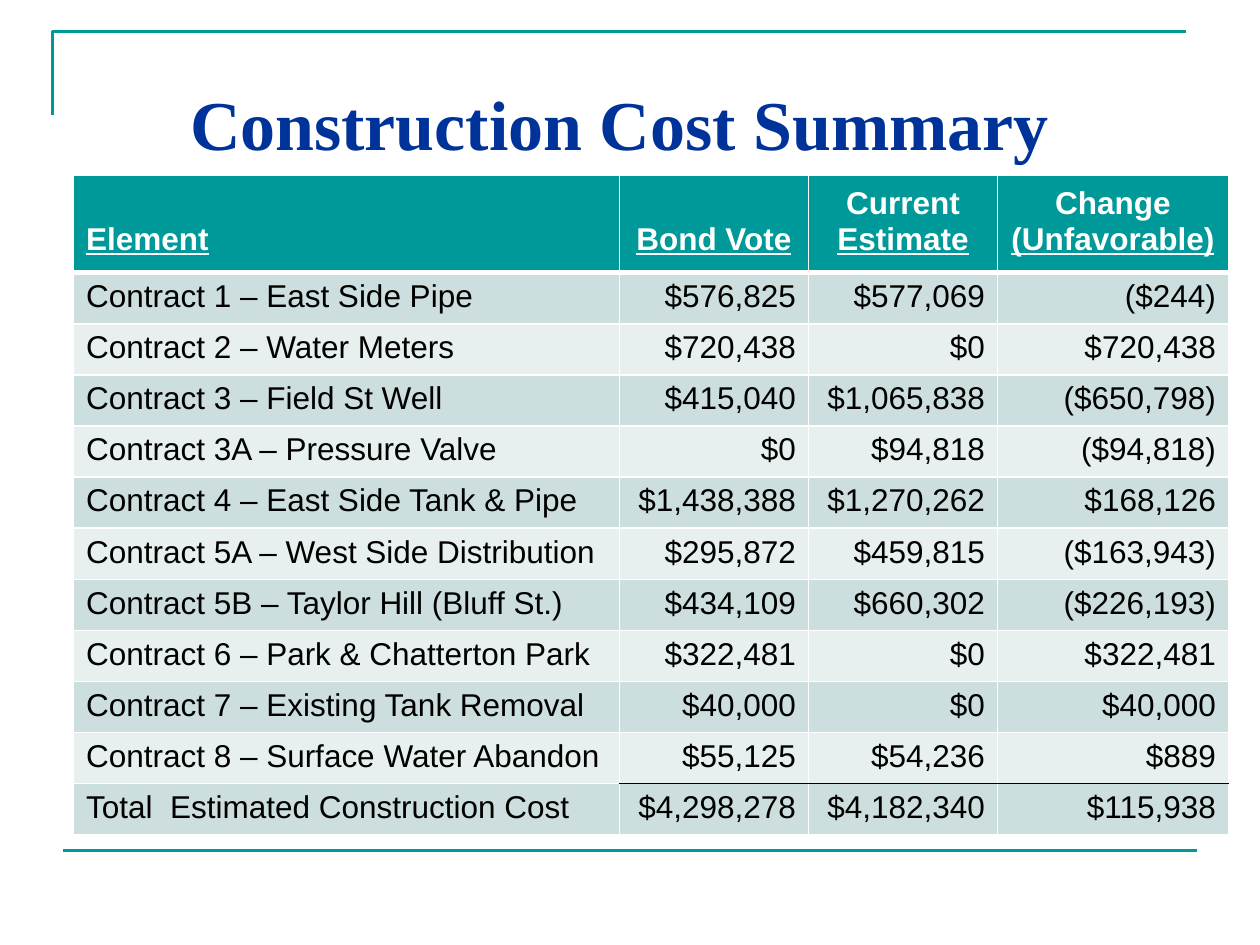
from dataclasses import dataclass

from lxml import etree
from pptx import Presentation
from pptx import util as u
from pptx.dml import color
from pptx.enum import shapes, text
from pptx.oxml import ns

WHITE = color.RGBColor(0xFF, 0xFF, 0xFF)
BLACK = color.RGBColor(0x00, 0x00, 0x00)
TEAL = color.RGBColor(0x00, 0x99, 0x99)
NAVY = color.RGBColor(0x00, 0x33, 0x99)
BAND_DARK = color.RGBColor(0xCC, 0xDE, 0xDE)
BAND_LIGHT = color.RGBColor(0xE7, 0xEF, 0xEF)

COLUMN_WIDTHS = (312, 108, 108, 132)
HEADER_HEIGHT = 54
ROW_HEIGHT = 29.2


@dataclass(frozen=True)
class Heading:
    paragraphs: tuple[tuple[str, ...], ...]
    align: text.PP_ALIGN = text.PP_ALIGN.CENTER


@dataclass(frozen=True)
class Cost:
    element: str
    bond_vote: str
    estimate: str
    change: str


@dataclass(frozen=True)
class Edge:
    ink: color.RGBColor = WHITE
    width: float = 1


HEADINGS = (
    Heading((("Element",),), text.PP_ALIGN.LEFT),
    Heading((("Bond Vote",),)),
    Heading((("Current ", "Estimate"),)),
    Heading((("Change",), ("(Unfavorable)",))),
)

COSTS = (
    Cost("Contract 1 – East Side Pipe", "$576,825", "$577,069", "($244)"),
    Cost("Contract 2 – Water Meters", "$720,438", "$0", "$720,438"),
    Cost("Contract 3 – Field St Well", "$415,040", "$1,065,838", "($650,798)"),
    Cost("Contract 3A – Pressure Valve", "$0", "$94,818", "($94,818)"),
    Cost("Contract 4 – East Side Tank & Pipe", "$1,438,388", "$1,270,262", "$168,126"),
    Cost("Contract 5A – West Side Distribution", "$295,872", "$459,815", "($163,943)"),
    Cost("Contract 5B – Taylor Hill (Bluff St.)", "$434,109", "$660,302", "($226,193)"),
    Cost("Contract 6 – Park & Chatterton Park", "$322,481", "$0", "$322,481"),
    Cost("Contract 7 – Existing Tank Removal", "$40,000", "$0", "$40,000"),
    Cost("Contract 8 – Surface Water Abandon", "$55,125", "$54,236", "$889"),
    Cost("Total  Estimated Construction Cost", "$4,298,278", "$4,182,340", "$115,938"),
)

PLAIN = Edge()
HEADER_EDGE = Edge(width=3)
TOTAL_EDGE = Edge(BLACK)


def style_font(font, name: str, size: float, ink: color.RGBColor, bold: bool) -> None:
    font.name = name
    font.size = u.Pt(size)
    font.color.rgb = ink
    font.bold = bold


def style_cell(cell, fill: color.RGBColor, top: Edge, bottom: Edge) -> None:
    properties = cell._tc.get_or_add_tcPr()
    for tag, edge in (("lnL", PLAIN), ("lnR", PLAIN), ("lnT", top), ("lnB", bottom)):
        line = etree.SubElement(properties, ns.qn(f"a:{tag}"), w=str(u.Pt(edge.width)))
        solid = etree.SubElement(line, ns.qn("a:solidFill"))
        etree.SubElement(solid, ns.qn("a:srgbClr"), val=str(edge.ink))
    cell.fill.solid()
    cell.fill.fore_color.rgb = fill


def fill_heading(cell, heading: Heading) -> None:
    style_cell(cell, TEAL, PLAIN, HEADER_EDGE)
    cell.vertical_anchor = text.MSO_ANCHOR.BOTTOM
    cell.margin_bottom = u.Pt(9)
    frame = cell.text_frame
    for index, pieces in enumerate(heading.paragraphs):
        para = frame.add_paragraph() if index else frame.paragraphs[0]
        para.alignment = heading.align
        style_font(para.font, "Arial", 18, WHITE, True)
        for piece in pieces:
            span = para.add_run()
            span.text = piece
    span.font.underline = True


def fill_cost(table, row: int, cost: Cost) -> None:
    values = (cost.element, cost.bond_vote, cost.estimate, cost.change)
    for column, value in enumerate(values):
        cell = table.cell(row, column)
        top = bottom = PLAIN
        if row == 1:
            top = HEADER_EDGE
        if column and row == len(COSTS):
            top = TOTAL_EDGE
        if column and row == len(COSTS) - 1:
            bottom = TOTAL_EDGE
        style_cell(cell, BAND_DARK if row % 2 else BAND_LIGHT, top, bottom)
        para = cell.text_frame.paragraphs[0]
        para.text = value
        para.alignment = text.PP_ALIGN.RIGHT if column else text.PP_ALIGN.LEFT
        style_font(para.font, "Arial", 18, BLACK, False)


def add_rules(page) -> None:
    builder = page.shapes.build_freeform(u.Pt(30), u.Pt(66))
    builder.add_line_segments(
        [(u.Pt(30), u.Pt(18)), (u.Pt(678), u.Pt(18))], close=False
    )
    corner = builder.convert_to_shape()
    corner.shadow.inherit = False
    corner.fill.background()
    footer = page.shapes.add_connector(
        shapes.MSO_CONNECTOR.STRAIGHT, u.Pt(36), u.Pt(486), u.Pt(684), u.Pt(486)
    )
    for rule in (corner, footer):
        rule.line.color.rgb = TEAL
        rule.line.width = u.Pt(1.5)
    etree.SubElement(footer._element.spPr, ns.qn("a:effectLst"))


def add_title(page) -> None:
    box = page.shapes.add_textbox(u.Pt(30), u.Pt(42), u.Pt(648), u.Pt(55.4))
    frame = box.text_frame
    frame.word_wrap = True
    frame.vertical_anchor = text.MSO_ANCHOR.BOTTOM
    para = frame.paragraphs[0]
    para.text = "Construction Cost Summary"
    para.alignment = text.PP_ALIGN.CENTER
    style_font(para.font, "Times New Roman", 40, NAVY, True)


def add_cost_table(page) -> None:
    height = HEADER_HEIGHT + ROW_HEIGHT * len(COSTS)
    table = page.shapes.add_table(
        len(COSTS) + 1, len(HEADINGS),
        u.Pt(42), u.Pt(100), u.Pt(sum(COLUMN_WIDTHS)), u.Pt(height),
    ).table
    table.horz_banding = False
    for column, width in zip(table.columns, COLUMN_WIDTHS):
        column.width = u.Pt(width)
    for index, row in enumerate(table.rows):
        row.height = u.Pt(ROW_HEIGHT if index else HEADER_HEIGHT)
    for column, heading in enumerate(HEADINGS):
        fill_heading(table.cell(0, column), heading)
    for row, cost in enumerate(COSTS, start=1):
        fill_cost(table, row, cost)


def main() -> None:
    deck = Presentation()
    deck.slide_width = u.Pt(720)
    deck.slide_height = u.Pt(540)
    page = deck.slides.add_slide(deck.slide_layouts[6])
    add_rules(page)
    add_title(page)
    add_cost_table(page)
    deck.save("out.pptx")


if __name__ == "__main__":
    main()
